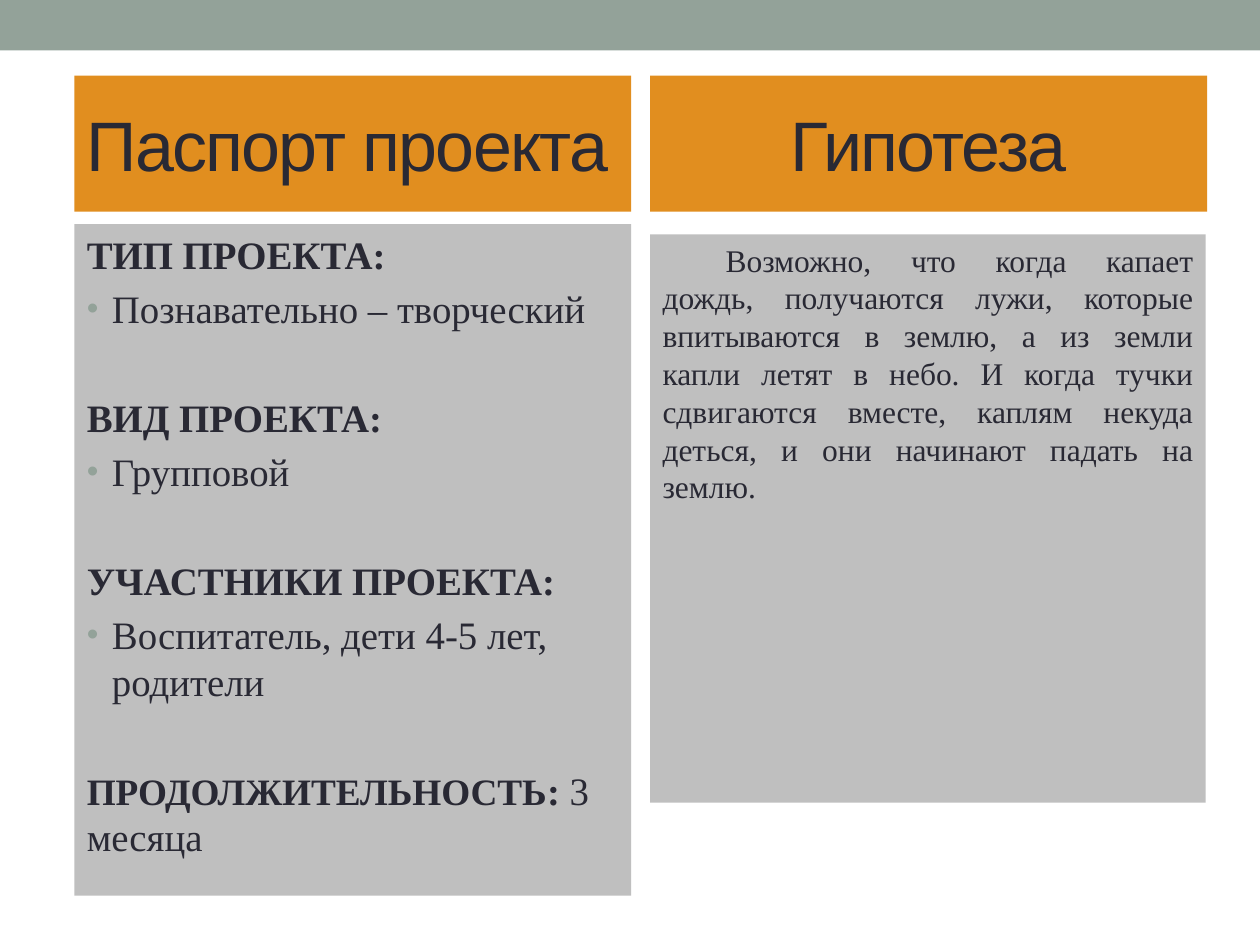
"""Build the project passport and hypothesis slide."""
from lxml.etree import SubElement
from pptx import Presentation
from pptx.dml.color import RGBColor
from pptx.enum.shapes import MSO_SHAPE
from pptx.enum.text import MSO_ANCHOR, PP_ALIGN
from pptx.oxml.ns import qn
from pptx.util import Inches, Pt

SAGE, ORANGE, GRAY, INK = "93A299", "E18E1F", "BFBFBF", "292934"
LEFT, RIGHT, COLUMN_WIDTH = 0.59, 5.16, 4.42
TITLE_TOP, TITLE_HEIGHT = 0.6, 1.08
BODY_SIZE, SPACE, SECTION_SPACE = 22.2, 4.4, 35.5

TITLES = [
    ("Паспорт проекта", LEFT, PP_ALIGN.LEFT),
    ("Гипотеза", RIGHT, PP_ALIGN.CENTER),
]
SECTIONS = [
    ("ТИП ПРОЕКТА:", "Познавательно – творческий"),
    ("ВИД ПРОЕКТА:", "Групповой"),
    ("УЧАСТНИКИ ПРОЕКТА:", "Воспитатель, дети 4-5 лет, родители"),
]
DURATION = [
    ("ПРОДОЛЖИТЕЛЬНОСТЬ", 21.3, True),
    (": ", BODY_SIZE, True),
    ("3 месяца", BODY_SIZE, False),
]
HYPOTHESIS = (
    "Возможно, что когда капает дождь, получаются лужи, которые "
    "впитываются в землю, а из земли капли летят в небо. И когда тучки "
    "сдвигаются вместе, каплям некуда деться, и они начинают падать на землю."
)


def color(value):
    return RGBColor.from_string(value)


def add_box(page, left, top, width, height, fill, anchor=MSO_ANCHOR.TOP):
    box = page.shapes.add_shape(
        MSO_SHAPE.RECTANGLE, Inches(left), Inches(top), Inches(width), Inches(height)
    )
    box.shadow.inherit = False
    box.fill.solid()
    box.fill.fore_color.rgb = color(fill)
    box.line.fill.background()
    box.text_frame.word_wrap = True
    box.text_frame.vertical_anchor = anchor
    return box


def add_text(para, text, size=BODY_SIZE, font="Times New Roman", bold=False, tracking=None):
    span = para.add_run()
    span.text = text
    span.font.size = Pt(size)
    span.font.name = font
    span.font.bold = bold
    span.font.color.rgb = color(INK)
    if tracking is not None:
        span.font._element.set("spc", str(tracking * 100))


def next_paragraph(box, space=0, align=PP_ALIGN.LEFT):
    frame = box.text_frame
    para = frame.paragraphs[0] if not frame.text else frame.add_paragraph()
    para.alignment = align
    para.space_before = Pt(space)
    return para


def indent(para, margin, first_line):
    properties = para._p.get_or_add_pPr()
    properties.set("marL", str(Inches(margin)))
    properties.set("indent", str(Inches(first_line)))
    return properties


def add_bullet(para):
    properties = indent(para, 0.2, -0.2)
    bullet_color = SubElement(properties, qn("a:buClr"))
    SubElement(bullet_color, qn("a:srgbClr"), val=SAGE)
    SubElement(properties, qn("a:buSzPct"), val="85000")
    SubElement(properties, qn("a:buFont"), typeface="Arial")
    SubElement(properties, qn("a:buChar"), char="•")


def main():
    deck = Presentation()
    deck.slide_width, deck.slide_height = Inches(10), Inches(7.5)
    page = deck.slides.add_slide(deck.slide_layouts[6])
    add_box(page, 0, 0, 10, 0.4, SAGE)

    for title, left, align in TITLES:
        box = add_box(
            page, left, TITLE_TOP, COLUMN_WIDTH, TITLE_HEIGHT, ORANGE, MSO_ANCHOR.MIDDLE
        )
        para = next_paragraph(box, align=align)
        add_text(para, title, size=40, font="Arial", tracking=-1)

    passport = add_box(page, LEFT, 1.78, COLUMN_WIDTH, 5.33, GRAY)
    for index, (heading, detail) in enumerate(SECTIONS):
        para = next_paragraph(passport, SECTION_SPACE if index else SPACE)
        add_text(para, heading, bold=True)
        para = next_paragraph(passport, SPACE)
        add_bullet(para)
        add_text(para, detail)
    para = next_paragraph(passport, SECTION_SPACE)
    for text, size, bold in DURATION:
        add_text(para, text, size=size, bold=bold)

    hypothesis = add_box(page, RIGHT, 1.86, 4.41, 4.51, GRAY)
    para = next_paragraph(hypothesis, align=PP_ALIGN.JUSTIFY)
    indent(para, 0, 0.5)
    add_text(para, HYPOTHESIS, size=18)

    deck.save("out.pptx")


if __name__ == "__main__":
    main()
